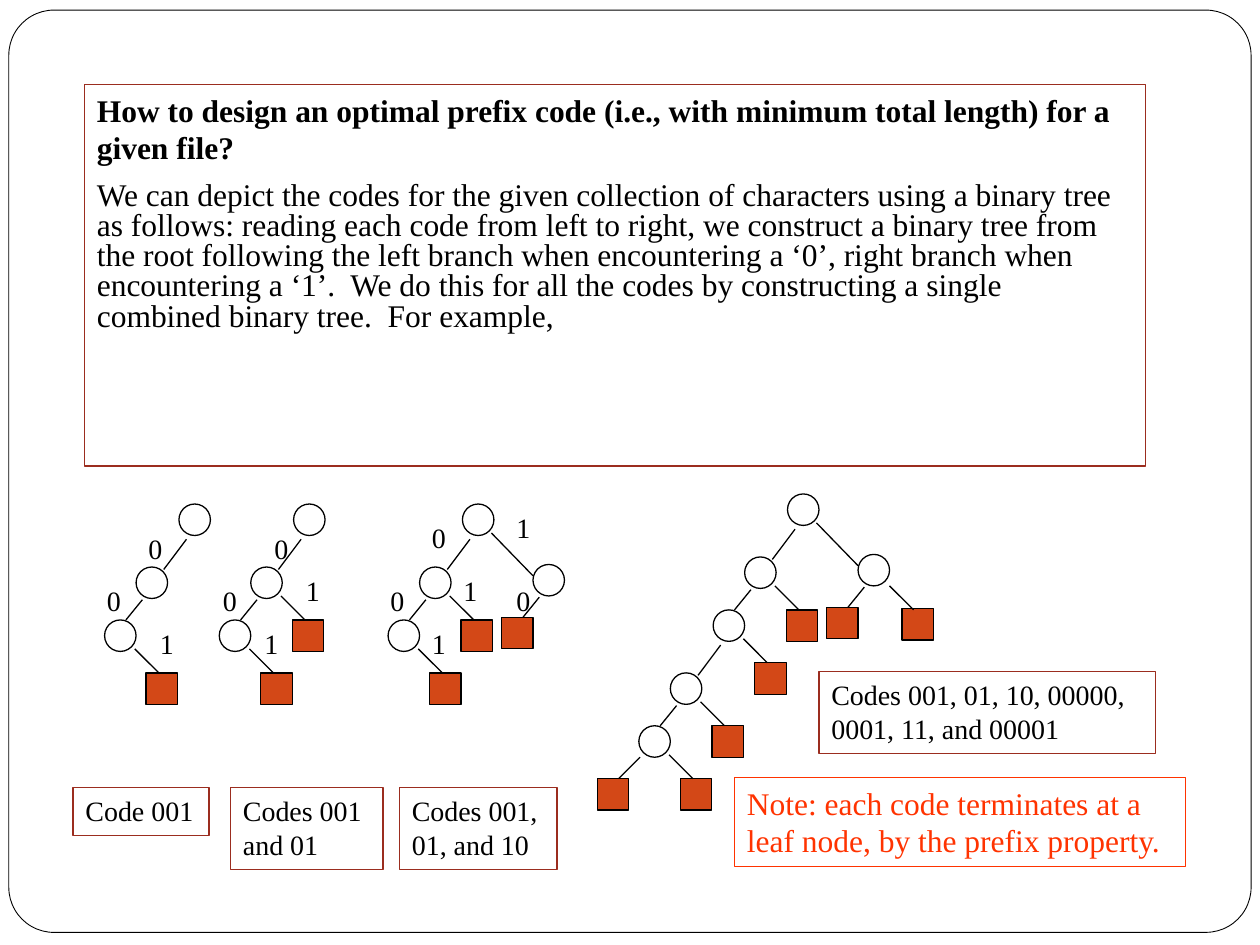
from pptx import Presentation
from pptx.dml.color import RGBColor
from pptx.enum.shapes import MSO_CONNECTOR, MSO_SHAPE
from pptx.enum.text import MSO_ANCHOR, MSO_AUTO_SIZE, PP_ALIGN
from pptx.util import Inches, Pt
from lxml import etree

RECT, OVAL, ROUND = MSO_SHAPE.RECTANGLE, MSO_SHAPE.OVAL, MSO_SHAPE.ROUNDED_RECTANGLE
STRAIGHT = MSO_CONNECTOR.STRAIGHT
TOP, LEFT = MSO_ANCHOR.TOP, PP_ALIGN.LEFT
GROW = MSO_AUTO_SIZE.SHAPE_TO_FIT_TEXT
BLACK = RGBColor(0x00, 0x00, 0x00)
WHITE = RGBColor(0xFF, 0xFF, 0xFF)
BROWN = RGBColor(0x9B, 0x2D, 0x1F)
ORANGE = RGBColor(0xD3, 0x48, 0x17)
RED = RGBColor(0xFF, 0x33, 0x00)
FONT = "Times New Roman"
NODE = 0.25

prs = Presentation()
prs.slide_width, prs.slide_height = Inches(10), Inches(7.5)
s = prs.slides.add_slide(prs.slide_layouts[6])


def add_box(kind, x, y, w, h, line, fill=None, width=0.75):
    sp = s.shapes.add_shape(kind, Inches(x), Inches(y), Inches(w), Inches(h))
    sp.shadow.inherit = False
    if fill is None:
        sp.fill.background()
    else:
        sp.fill.solid()
        sp.fill.fore_color.rgb = fill
    sp.line.color.rgb = line
    sp.line.width = Pt(width)
    return sp


def set_text(sp, text, size, color=BLACK):
    tf = sp.text_frame
    tf.text = text
    tf.word_wrap = True
    tf.auto_size = GROW
    tf.vertical_anchor = TOP
    for p in tf.paragraphs:
        p.alignment = LEFT
        for r in p.runs:
            r.font.name = FONT
            r.font.size = Pt(size)
            r.font.color.rgb = color
    return tf


# Slide frame
frame = add_box(ROUND, 0.07, 0.08, 9.86, 7.32, BLACK, WHITE, 0.5)
frame.adjustments[0] = 0.049

# Question and explanation
sp = add_box(RECT, 0.67, 0.67, 8.42, 3.03, BROWN)
tf = set_text(
    sp,
    "How to design an optimal prefix code (i.e., with minimum total length) "
    "for a given file?\n"
    "We can depict the codes for the given collection of characters using a "
    "binary tree as follows: reading each code from left to right, we construct "
    "a binary tree from the root following the left branch when encountering a "
    "‘0’, right branch when encountering a ‘1’.  We do this for all the codes by "
    "constructing a single combined binary tree.  For example,",
    18,
)
tf.auto_size = MSO_AUTO_SIZE.NONE
question, answer = tf.paragraphs
question.runs[0].font.bold = True
answer.line_spacing = 0.8
answer.space_before = Pt(9)

# Branches, measured from the parent's corner: child corner, edge start, edge end
BRANCHES = {
    "long left": ((-0.34, 0.5), (0.06, 0.28), (-0.12, 0.52)),
    "left": ((-0.25, 0.42), (0.05, 0.26), (-0.08, 0.42)),
    "wide left": ((-0.33, 0.42), (0.01, 0.25), (-0.16, 0.42)),
    "right": ((0.33, 0.42), (0.24, 0.23), (0.43, 0.42)),
    "outer right": ((0.35, 0.43), (0.25, 0.25), (0.44, 0.44)),
    "far right": ((0.56, 0.48), (0.23, 0.23), (0.56, 0.57)),
}

# Trees grow step by step: (index of parent, branch, shape of child)
code_001 = [(0, "long left", OVAL), (1, "left", OVAL), (2, "right", RECT)]
code_01 = [(1, "right", RECT)]
code_10 = [(0, "far right", OVAL), (5, "left", RECT)]
other_codes = [
    (5, "outer right", RECT),
    (2, "long left", OVAL), (8, "right", RECT),
    (8, "left", OVAL), (10, "right", RECT), (10, "wide left", RECT),
]
trees = [
    (1.42, 4, code_001),
    (2.33, 4, code_001 + code_01),
    (3.67, 4, code_001 + code_01 + code_10),
    (6.25, 3.92, code_001 + code_01 + code_10 + other_codes),
]
for root_x, root_y, steps in trees:
    add_box(OVAL, root_x, root_y, NODE, NODE, BLACK)
    nodes = [(root_x, root_y)]
    for parent, branch, kind in steps:
        px, py = nodes[parent]
        (dx, dy), (x1, y1), (x2, y2) = BRANCHES[branch]
        nodes.append((px + dx, py + dy))
        add_box(kind, px + dx, py + dy, NODE, NODE, BLACK,
                ORANGE if kind == RECT else None)
        edge = s.shapes.add_connector(STRAIGHT, Inches(px + x1), Inches(py + y1),
                                      Inches(px + x2), Inches(py + y2))
        edge.line.color.rgb = BLACK
        edge.line.width = Pt(0.75)
        etree.SubElement(
            edge._element.spPr,
            "{http://schemas.openxmlformats.org/drawingml/2006/main}effectLst")

# Bits on the branches
bits = [
    ("0", 1.08, 4.17), ("0", 0.75, 4.58), ("1", 1.17, 4.92),
    ("0", 2.08, 4.17), ("0", 1.67, 4.58), ("1", 2.33, 4.5), ("1", 2, 4.92),
    ("1", 4, 4), ("0", 4, 4.58), ("0", 3.33, 4.08),
    ("1", 3.58, 4.5), ("0", 3, 4.58), ("1", 3.33, 4.92),
]
for bit, x, y in bits:
    sp = s.shapes.add_textbox(Inches(x), Inches(y), Inches(0.42), Inches(0.37))
    set_text(sp, bit, 16)

# Captions and note
captions = [
    ("Code 001", 0.58, 6.25, 1.08, 0.38, 16, BLACK, BROWN),
    ("Codes 001\nand 01", 1.83, 6.25, 1.21, 0.65, 16, BLACK, BROWN),
    ("Codes 001, 01, and 10", 3.17, 6.25, 1.25, 0.65, 16, BLACK, BROWN),
    ("Codes 001, 01, 10, 00000, 0001, 11, and 00001",
     6.5, 5.33, 2.67, 0.65, 16, BLACK, BROWN),
    ("Note: each code terminates at a leaf node, by the prefix property.",
     5.83, 6.17, 3.58, 0.71, 18, RED, RED),
]
for text, x, y, w, h, size, color, line in captions:
    set_text(add_box(RECT, x, y, w, h, line), text, size, color)

prs.save("out.pptx")
